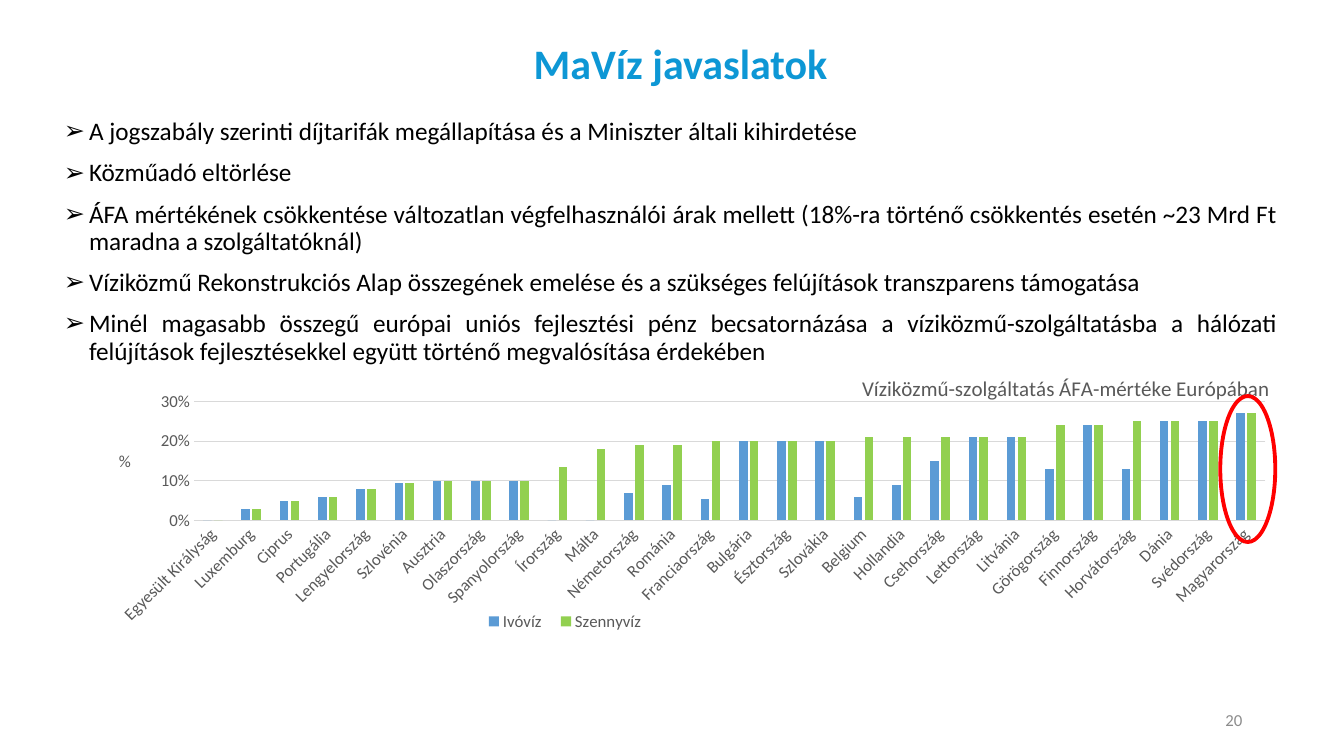
from lxml import etree
from pptx import Presentation, util as u
from pptx.chart.data import CategoryChartData
from pptx.dml.color import RGBColor
from pptx.enum import chart as charts, shapes, text
from pptx.oxml.ns import qn

BLUE_TITLE = RGBColor(0x0D, 0x97, 0xD5)
BLACK = RGBColor(0, 0, 0)
GREY_TEXT = RGBColor(0x59, 0x59, 0x59)
GREY_LINE = RGBColor(0xD9, 0xD9, 0xD9)
GREY_NUMBER = RGBColor(0x8C, 0x8C, 0x8C)
RED = RGBColor(0xFF, 0, 0)
SERIES_COLORS = [RGBColor(0x5B, 0x9B, 0xD5), RGBColor(0x92, 0xD0, 0x50)]
FONT = "Calibri"
SCALE = 914400 / 100.8

BULLETS = [
    "A jogszabály szerinti díjtarifák megállapítása és a Miniszter általi kihirdetése",
    "Közműadó eltörlése",
    "ÁFA mértékének csökkentése változatlan végfelhasználói árak mellett "
    "(18%-ra történő csökkentés esetén ~23 Mrd Ft maradna a szolgáltatóknál)",
    "Víziközmű Rekonstrukciós Alap összegének emelése és a szükséges felújítások "
    "transzparens támogatása",
    "Minél magasabb összegű európai uniós fejlesztési pénz becsatornázása a "
    "víziközmű-szolgáltatásba a hálózati felújítások fejlesztésekkel együtt történő "
    "megvalósítása érdekében",
]
# Country, drinking water rate, waste water rate
RATES = [
    ("Egyesült Királyság", 0, 0), ("Luxemburg", 0.03, 0.03), ("Ciprus", 0.05, 0.05),
    ("Portugália", 0.06, 0.06), ("Lengyelország", 0.08, 0.08),
    ("Szlovénia", 0.095, 0.095), ("Ausztria", 0.1, 0.1), ("Olaszország", 0.1, 0.1),
    ("Spanyolország", 0.1, 0.1), ("Írország", 0, 0.135), ("Málta", 0, 0.18),
    ("Németország", 0.07, 0.19), ("Románia", 0.09, 0.19), ("Franciaország", 0.055, 0.2),
    ("Bulgária", 0.2, 0.2), ("Észtország", 0.2, 0.2), ("Szlovákia", 0.2, 0.2),
    ("Belgium", 0.06, 0.21), ("Hollandia", 0.09, 0.21), ("Csehország", 0.15, 0.21),
    ("Lettország", 0.21, 0.21), ("Litvánia", 0.21, 0.21), ("Görögország", 0.13, 0.24),
    ("Finnország", 0.24, 0.24), ("Horvátország", 0.13, 0.25), ("Dánia", 0.25, 0.25),
    ("Svédország", 0.25, 0.25), ("Magyarország", 0.27, 0.27),
]


def px(*lengths):
    return [u.Emu(round(length * SCALE)) for length in lengths]


def place(part, after, **values):
    """Give a chart part a manual layout, as fractions of the chart."""
    for old in part.findall(qn("c:layout")):
        part.remove(old)
    layout = etree.Element(qn("c:layout"))
    manual = etree.SubElement(layout, qn("c:manualLayout"))
    for name, value in values.items():
        etree.SubElement(manual, qn(f"c:{name}")).set("val", str(value))
    part.insert(part.index(part.find(qn(after))) + 1 if after else 0, layout)


deck = Presentation()
deck.slide_width, deck.slide_height = u.Inches(13.33), u.Inches(7.5)
page = deck.slides.add_slide(deck.slide_layouts[6])

# Title and page number
for words, area, size, color, bold, align in [
    ("MaVíz javaslatok", (229, 30, 903, 72), 30, BLUE_TITLE, True, text.PP_ALIGN.CENTER),
    ("20", (950, 701, 302, 40), 12, GREY_NUMBER, False, text.PP_ALIGN.RIGHT),
]:
    box = page.shapes.add_textbox(*px(*area))
    box.text_frame.word_wrap = True
    box.text_frame.vertical_anchor = text.MSO_ANCHOR.MIDDLE
    para = box.text_frame.paragraphs[0]
    para.text, para.alignment, para.line_spacing = words, align, 0.9
    para.font.name, para.font.size, para.font.bold = FONT, u.Pt(size), bold
    para.font.color.rgb = color

# Proposals
box = page.shapes.add_textbox(*px(54, 114, 1233, 478))
box.text_frame.word_wrap = True
for index, words in enumerate(BULLETS):
    para = box.text_frame.add_paragraph() if index else box.text_frame.paragraphs[0]
    para.text, para.alignment, para.line_spacing = words, text.PP_ALIGN.JUSTIFY, 0.9
    para.space_before = u.Pt(10 if index else 0)
    settings = para._p.get_or_add_pPr()
    settings.set("marL", str(u.Inches(0.25)))
    settings.set("indent", str(u.Inches(-0.25)))
    etree.SubElement(settings, qn("a:buFont")).set("typeface", "Wingdings 3")
    settings[-1].set("typeface", "Arial")
    etree.SubElement(settings, qn("a:buChar")).set("char", "➢")
    para.font.name, para.font.size = FONT, u.Pt(18)
    para.font.color.rgb = BLACK

# VAT rate chart
countries, drinking, waste = zip(*RATES)
data = CategoryChartData(number_format="0%")
data.categories = countries
data.add_series("Ivóvíz", drinking)
data.add_series("Szennyvíz", waste)
chart = page.shapes.add_chart(
    charts.XL_CHART_TYPE.COLUMN_CLUSTERED, *px(92, 353, 1197, 284), data).chart
chart.font.name, chart.font.size = FONT, u.Pt(12)
chart.font.color.rgb = GREY_TEXT
plot = chart.plots[0]
plot.gap_width, plot.overlap, plot.vary_by_categories = 219, -27, False
for series, color in zip(plot.series, SERIES_COLORS):
    series.format.fill.solid()
    series.format.fill.fore_color.rgb = color

# Axes
country_axis, rate_axis = chart.category_axis, chart.value_axis
for axis in (country_axis, rate_axis):
    axis.major_tick_mark = axis.minor_tick_mark = charts.XL_TICK_MARK.NONE
    axis.tick_labels.font.name, axis.tick_labels.font.size = FONT, u.Pt(12)
    axis.tick_labels.font.color.rgb = GREY_TEXT
country_axis.format.line.color.rgb = GREY_LINE
country_axis.format.line.width = u.Pt(0.75)
chart.element.find(f".//{qn('c:catAx')}/{qn('c:txPr')}/{qn('a:bodyPr')}").set("rot", "-2700000")
rate_axis.minimum_scale, rate_axis.maximum_scale, rate_axis.major_unit = 0, 0.3, 0.1
rate_axis.tick_labels.number_format = "0%"
rate_axis.tick_labels.number_format_is_linked = False
rate_axis.format.line.fill.background()
rate_axis.major_gridlines.format.line.color.rgb = GREY_LINE
rate_axis.major_gridlines.format.line.width = u.Pt(0.75)

# Chart titles and legend
chart.has_title = True
for heading, words, size in [
    (chart.chart_title, "Víziközmű-szolgáltatás ÁFA-mértéke Európában", 15),
    (rate_axis.axis_title, "%", 12),
]:
    para = heading.text_frame.paragraphs[0]
    para.text = words
    para.font.name, para.font.size, para.font.bold = FONT, u.Pt(size), False
    para.font.color.rgb = GREY_TEXT
    heading.text_frame._txBody.find(qn("a:bodyPr")).set("rot", "0")
chart.has_legend = True
chart.legend.position = charts.XL_LEGEND_POSITION.BOTTOM
chart.legend.include_in_layout = False
chart.legend.font.name, chart.legend.font.size = FONT, u.Pt(12)
chart.legend.font.color.rgb = GREY_TEXT

body = chart.element.find(qn("c:chart"))
plot_area = body.find(qn("c:plotArea"))
place(plot_area, None, layoutTarget="inner", xMode="edge", yMode="edge",
      x=0.085, y=0.171, w=0.895, h=0.419)
place(body.find(qn("c:title")), "c:tx", xMode="edge", yMode="edge", x=0.64, y=0.06)
place(plot_area.find(f"{qn('c:valAx')}/{qn('c:title')}"), "c:tx",
      xMode="edge", yMode="edge", x=0.02, y=0.33)
place(body.find(qn("c:legend")), "c:legendPos", xMode="edge", yMode="edge",
      x=0.32, y=0.9, w=0.15, h=0.09)

# Ring around Hungary
ring = page.shapes.add_shape(shapes.MSO_SHAPE.OVAL, *px(1220, 396, 55, 146))
ring.shadow.inherit = False
ring.fill.background()
ring.line.color.rgb = RED
ring.line.width = u.Pt(2.75)

deck.save("out.pptx")
